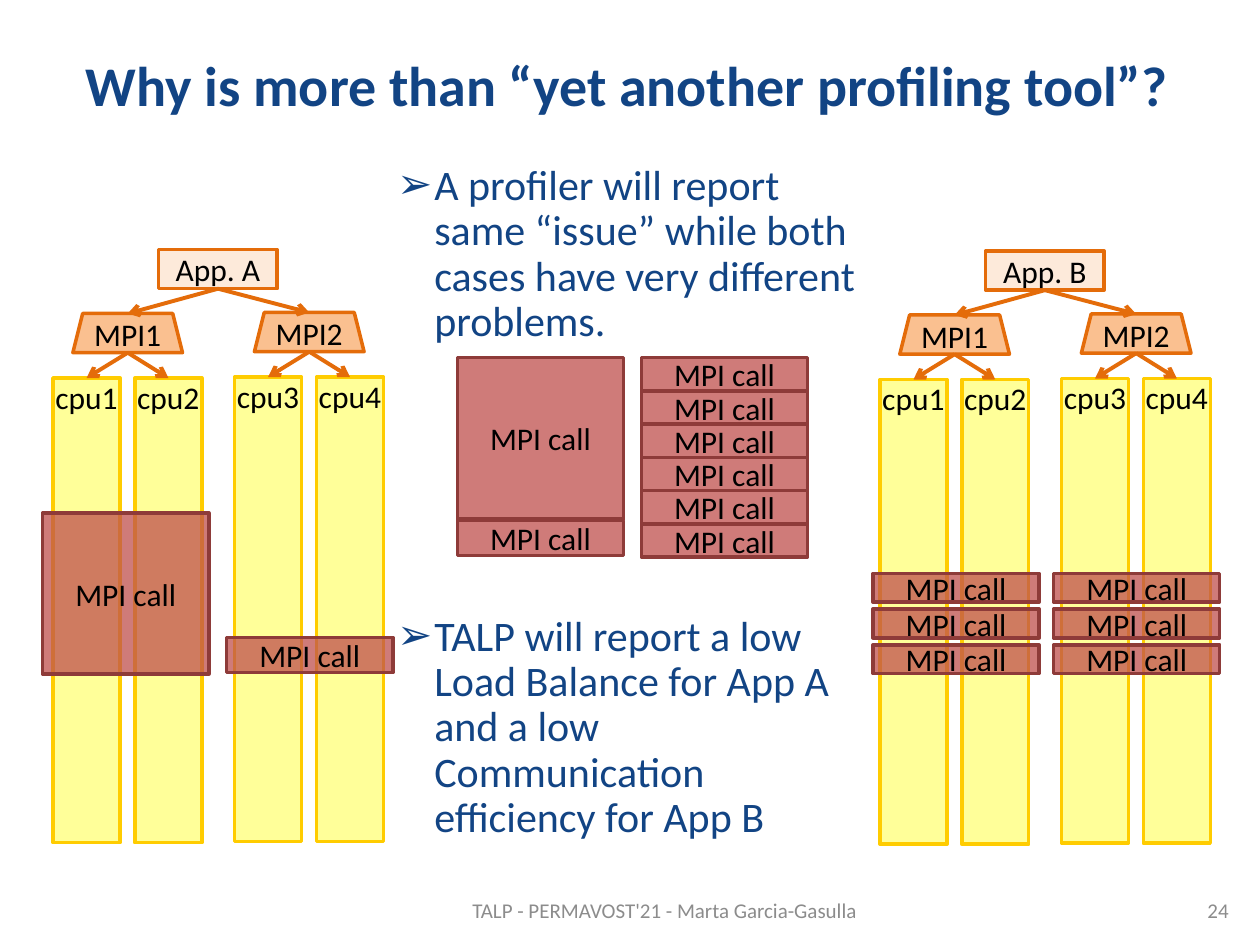
import dataclasses

import lxml.etree
import pptx
import pptx.dml.color
import pptx.enum.shapes
import pptx.enum.text
import pptx.oxml.ns
import pptx.util

Cm = pptx.util.Cm
Pt = pptx.util.Pt
qn = pptx.oxml.ns.qn
ALIGN = pptx.enum.text.PP_ALIGN
ANCHOR = pptx.enum.text.MSO_ANCHOR
SHAPE = pptx.enum.shapes.MSO_SHAPE


@dataclasses.dataclass(frozen=True)
class Theme:
    font: str = "Calibri"
    navy: str = "124484"
    grey: str = "8C8C8C"
    black: str = "000000"
    orange: str = "E46C0A"
    app: tuple = ("FDEADA", "E46C0A")
    mpi: tuple = ("FAC090", "E46C0A")
    cpu: tuple = ("FFFF99", "FFCC00")
    call: tuple = ("C0504D", "8E3B39")
    call_alpha: int = 75
    title_size: int = 32
    body_size: int = 24
    label_size: int = 18
    footer_size: int = 12
    border: float = 2
    arrow: float = 2.25


def rgb(value):
    return pptx.dml.color.RGBColor.from_string(value)


def write_text(p, text, *, font, size, color, bold=False, align=None,
               spacing=None, before=0, bullet=None):
    if bullet:
        pPr = p._p.get_or_add_pPr()
        pPr.set("marL", str(Cm(0.75)))
        pPr.set("indent", str(-Cm(0.75)))
        clr = lxml.etree.SubElement(pPr, qn("a:buClr"))
        lxml.etree.SubElement(clr, qn("a:srgbClr"), val=color)
        lxml.etree.SubElement(pPr, qn("a:buChar"), char=bullet)
    p.alignment = align
    p.line_spacing = spacing
    p.space_before = Pt(before)
    r = p.add_run()
    r.text = text
    r.font.name = font
    r.font.size = Pt(size)
    r.font.bold = bold
    r.font.color.rgb = rgb(color)


class Deck:
    def __init__(self, theme, s):
        self.theme = theme
        self.s = s

    def place(self, sp, box):
        sp.left, sp.top, sp.width, sp.height = (Cm(v) for v in box)
        tf = sp.text_frame
        tf.word_wrap = True
        tf.auto_size = pptx.enum.text.MSO_AUTO_SIZE.NONE
        return tf

    def title(self, text, box):
        t = self.theme
        tf = self.place(self.s.shapes.title, box)
        tf.vertical_anchor = ANCHOR.MIDDLE
        write_text(tf.paragraphs[0], text, font=t.font, size=t.title_size,
                   color=t.navy, bold=True, align=ALIGN.CENTER, spacing=0.9)

    def bullets(self, items, box, gap):
        t = self.theme
        tf = self.place(self.s.placeholders[1], box)
        for i, text in enumerate(items):
            p = tf.add_paragraph() if i else tf.paragraphs[0]
            write_text(p, text, font=t.font, size=t.body_size, color=t.navy,
                       spacing=0.9, before=gap if i else 0, bullet="➢")

    def footer(self, text, box, align):
        t = self.theme
        sp = self.s.shapes.add_textbox(*(Cm(v) for v in box))
        tf = self.place(sp, box)
        tf.vertical_anchor = ANCHOR.MIDDLE
        write_text(tf.paragraphs[0], text, font=t.font, size=t.footer_size,
                   color=t.grey, align=align)

    def box(self, text, box, colors, kind=SHAPE.RECTANGLE, alpha=None, top=False):
        t = self.theme
        sp = self.s.shapes.add_shape(kind, *(Cm(v) for v in box))
        sp.shadow.inherit = False
        sp.fill.solid()
        sp.fill.fore_color.rgb = rgb(colors[0])
        if alpha:
            clr = sp._element.spPr.find(qn("a:solidFill"))[0]
            lxml.etree.SubElement(clr, qn("a:alpha"), val=str(alpha * 1000))
        sp.line.color.rgb = rgb(colors[1])
        sp.line.width = Pt(t.border)
        tf = sp.text_frame
        tf.vertical_anchor = ANCHOR.TOP if top else ANCHOR.MIDDLE
        if top:
            tf.margin_left = tf.margin_right = tf.margin_top = tf.margin_bottom = 0
        write_text(tf.paragraphs[0], text, font=t.font, size=t.label_size,
                   color=t.black, align=ALIGN.CENTER)
        return sp

    def call(self, x, y, height):
        self.box("MPI call", (x, y, 3.35, height), self.theme.call,
                 alpha=self.theme.call_alpha)

    def arrow(self, parent, child):
        cx = self.s.shapes.add_connector(
            pptx.enum.shapes.MSO_CONNECTOR.STRAIGHT, 0, 0, 0, 0)
        cx.begin_connect(parent, 2)
        cx.end_connect(child, 0)
        cx.line.color.rgb = rgb(self.theme.orange)
        cx.line.width = Pt(self.theme.arrow)
        spPr = cx._element.spPr
        lxml.etree.SubElement(spPr.find(qn("a:ln")), qn("a:tailEnd"), type="arrow")
        lxml.etree.SubElement(spPr, qn("a:effectLst"))

    def app_tree(self, name, x, y):
        t = self.theme
        app = self.box(name, (x + 2.13, y, 2.39, 0.79), t.app)
        for i in range(2):
            mx, my = x + 0.4 + 3.66 * i, y + 1.29 - 0.02 * i
            mpi = self.box(f"MPI{i + 1}", (mx, my, 2.21, 0.79), t.mpi,
                           kind=SHAPE.TRAPEZOID)
            self.arrow(app, mpi)
            for j in range(2):
                cpu = self.box(f"cpu{2 * i + j + 1}",
                               (mx - 0.4 + 1.65 * j, my + 1.3, 1.35, 9.37),
                               t.cpu, top=True)
                self.arrow(mpi, cpu)


def main():
    prs = pptx.Presentation()
    prs.slide_width, prs.slide_height = Cm(25.4), Cm(19.05)
    deck = Deck(Theme(), prs.slides.add_slide(prs.slide_layouts[1]))

    deck.title("Why is more than “yet another profiling tool”?",
               (0.76, 0.61, 23.77, 2.34))
    deck.bullets(
        ["A profiler will report same “issue” while both cases have very "
         "different problems.",
         "TALP will report a low Load Balance for App A and a low "
         "Communication efficiency for App B"],
        (7.75, 3.18, 9.86, 14.58), gap=154)
    deck.footer("24", (23.55, 17.83, 1.47, 1.02), ALIGN.RIGHT)
    deck.footer("TALP - PERMAVOST'21 - Marta Garcia-Gasulla",
                (5.97, 17.83, 14.86, 1.02), ALIGN.CENTER)

    deck.app_tree("App. A", 1.07, 5.03)
    deck.call(4.57, 12.85, 0.71)
    deck.call(0.86, 10.34, 3.25)

    deck.app_tree("App. B", 17.74, 5.06)
    for row in range(3):
        for col in range(2):
            deck.call(17.6 + 3.64 * col, 11.56 + 0.72 * row, 0.58)

    for row in range(6):
        deck.call(12.93, 7.21 + 0.67 * row, 0.67)
    deck.call(9.22, 10.49, 0.71)
    deck.call(9.22, 7.21, 3.25)

    prs.save("out.pptx")


if __name__ == "__main__":
    main()
